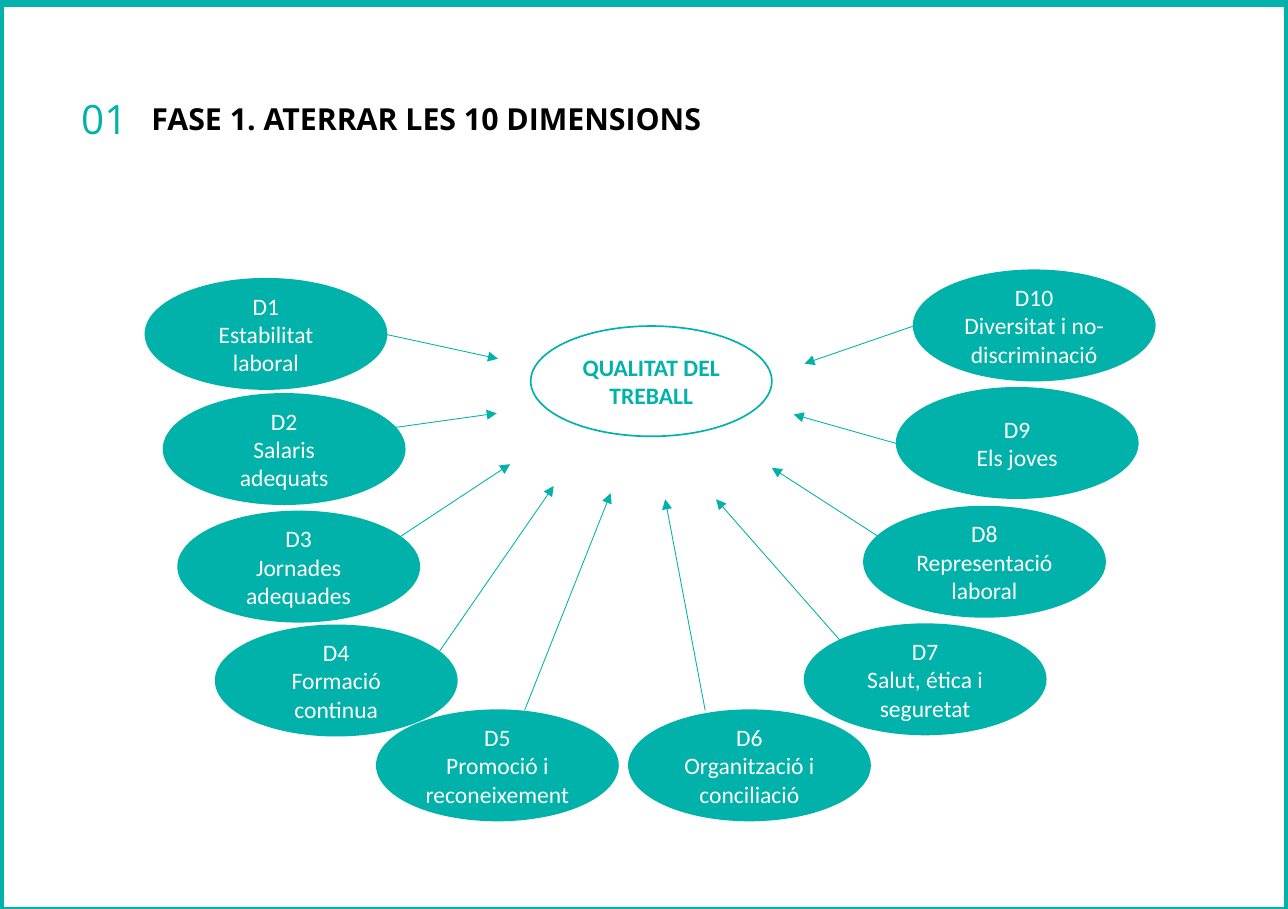
"""Build the slide on the ten dimensions of job quality."""
from lxml.etree import SubElement
from pptx import Presentation
from pptx.dml.color import RGBColor
from pptx.enum.shapes import MSO_CONNECTOR as Connector, MSO_SHAPE as Shape
from pptx.enum.text import MSO_ANCHOR as Anchor, MSO_AUTO_SIZE as AutoSize, PP_ALIGN as Align
from pptx.oxml.ns import qn
from pptx.util import Inches, Pt

TEAL = RGBColor(0x00, 0xB2, 0xA9)
WHITE = RGBColor(0xFF, 0xFF, 0xFF)
BLACK = RGBColor(0x00, 0x00, 0x00)

SLIDE_SIZE = (10.63, 7.5)
OVAL_SIZE = (1.99, 0.91)
NUMBER = "01"
TITLE = "FASE 1. ATERRAR LES 10 DIMENSIONS"
GOAL = "QUALITAT DEL TREBALL"
GOAL_CORNER = (4.38, 2.69)

# Each entry: name, corner of the oval, start and end of its arrow
DIMENSIONS = [
    ("Estabilitat laboral", (1.2, 2.3), (3.19, 2.76), (4.11, 2.96)),
    ("Salaris adequats", (1.35, 3.25), (3.24, 3.53), (4.1, 3.41)),
    ("Jornades adequades", (1.47, 4.22), (3.24, 4.47), (4.21, 3.83)),
    ("Formació continua", (1.78, 5.16), (3.63, 5.37), (4.57, 4.01)),
    ("Promoció i reconeixement", (3.11, 5.86), (4.33, 5.86), (5.04, 4.07)),
    ("Organització i conciliació", (5.19, 5.86), (5.82, 5.86), (5.49, 4.12)),
    ("Salut, ética i seguretat", (6.64, 5.15), (6.93, 5.28), (5.91, 4.12)),
    ("Representació laboral", (7.13, 4.18), (7.27, 4.44), (6.37, 3.86)),
    ("Els joves", (7.4, 3.2), (7.4, 3.66), (6.55, 3.42)),
    ("Diversitat i no-discriminació", (7.54, 2.23), (7.54, 2.69), (6.64, 3)),
]

NUMBER_FONT = {"name": "Open Sans", "size": Pt(24), "bold": False}
TITLE_FONT = {"name": "Open Sans", "size": Pt(18), "bold": True}
DIMENSION_FONT = {"name": "Calibri", "size": Pt(14), "bold": False}
GOAL_FONT = {"name": "Calibri", "size": Pt(14), "bold": True}
HEADING_FRAME = {
    "auto_size": AutoSize.NONE, "word_wrap": True, "vertical_anchor": Anchor.MIDDLE,
    "margin_left": 0, "margin_right": 0, "margin_top": 0, "margin_bottom": 0,
}
OVAL_FRAME = {"word_wrap": True, "vertical_anchor": Anchor.MIDDLE}


def inches(*lengths):
    return [Inches(length) for length in lengths]


def apply(target, values):
    for attribute, value in values.items():
        setattr(target, attribute, value)


def write(shape, lines, frame_format, font_format, color, align):
    frame = shape.text_frame
    apply(frame, frame_format)
    frame.text = "\n".join(lines)
    for paragraph in frame.paragraphs:
        paragraph.alignment = align
        for run in paragraph.runs:
            apply(run.font, font_format)
            run.font.color.rgb = color


def add_outlined(slide, kind, corner, size, width, fill=None):
    shape = slide.shapes.add_shape(kind, *inches(*corner, *size))
    shape.shadow.inherit = False
    if fill is None:
        shape.fill.background()
    else:
        shape.fill.solid()
        shape.fill.fore_color.rgb = fill
    shape.line.color.rgb = TEAL
    shape.line.width = Pt(width)
    return shape


def add_arrow(slide, start, end):
    arrow = slide.shapes.add_connector(Connector.STRAIGHT, *inches(*start, *end))
    arrow.line.color.rgb = TEAL
    arrow.line.width = Pt(0.5)
    SubElement(arrow.line._get_or_add_ln(), qn("a:tailEnd"), type="triangle")
    SubElement(arrow._element.spPr, qn("a:effectLst"))


def main():
    deck = Presentation()
    deck.slide_width, deck.slide_height = inches(*SLIDE_SIZE)
    slide = deck.slides.add_slide(deck.slide_layouts[5])

    title = slide.shapes.title
    title.left, title.top, title.width, title.height = inches(1.25, 0.6, 5.19, 0.76)
    write(title, [TITLE], HEADING_FRAME, TITLE_FONT, BLACK, Align.LEFT)
    number = slide.shapes.add_textbox(*inches(0.67, 0.78, 0.48, 0.39))
    write(number, [NUMBER], HEADING_FRAME, NUMBER_FONT, TEAL, Align.LEFT)

    add_outlined(slide, Shape.RECTANGLE, (0, 0.02), SLIDE_SIZE, 5)

    for order, (name, corner, start, end) in enumerate(DIMENSIONS, 1):
        dimension = add_outlined(slide, Shape.OVAL, corner, OVAL_SIZE, 1, TEAL)
        write(dimension, [f"D{order}", name], OVAL_FRAME, DIMENSION_FONT, WHITE, Align.CENTER)
        add_arrow(slide, start, end)

    goal = add_outlined(slide, Shape.OVAL, GOAL_CORNER, OVAL_SIZE, 1)
    write(goal, [GOAL], OVAL_FRAME, GOAL_FONT, TEAL, Align.CENTER)

    deck.save("out.pptx")


if __name__ == "__main__":
    main()
